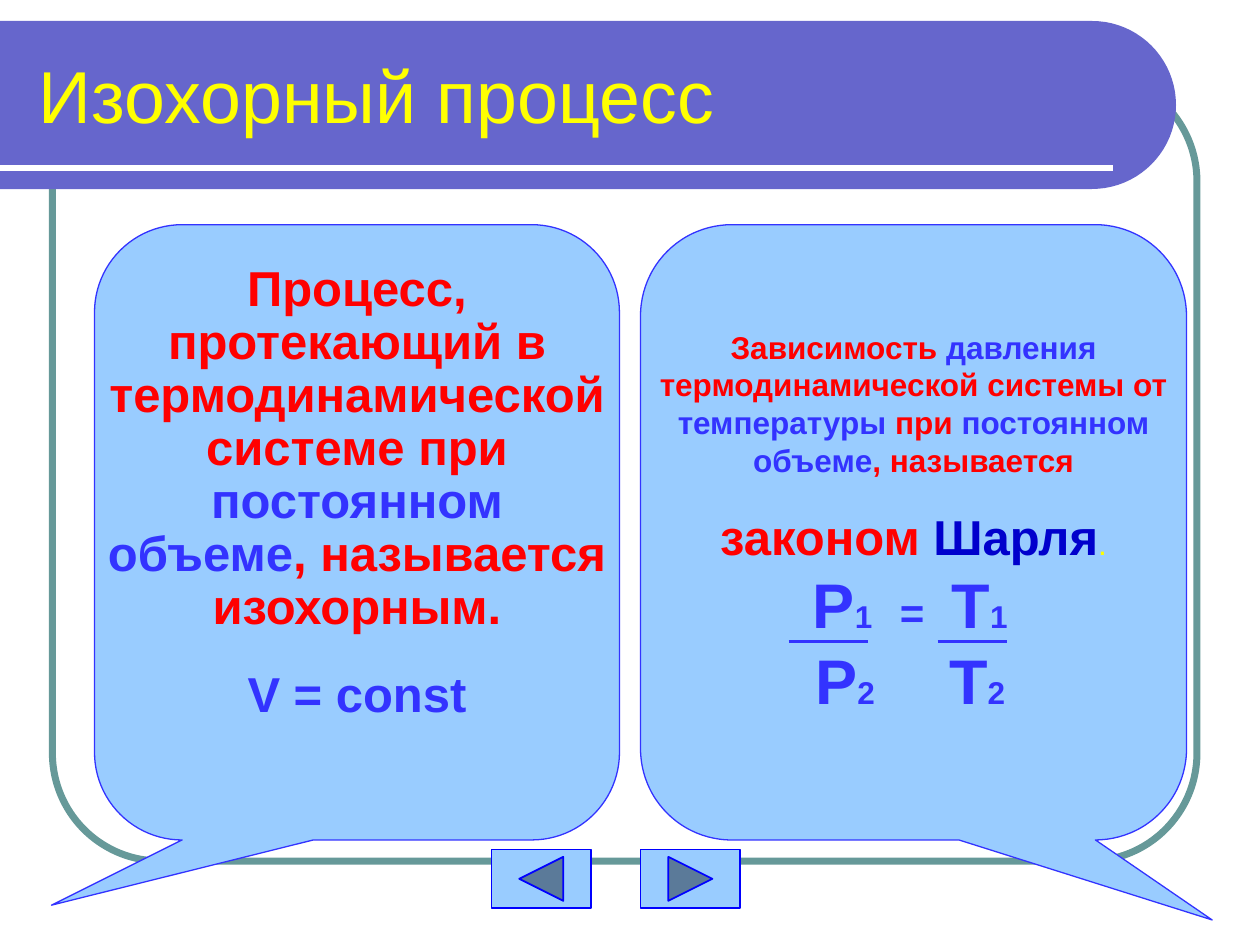
from math import cos, pi, sin

from lxml.etree import SubElement
from pptx import Presentation
from pptx.dml.color import RGBColor
from pptx.enum.shapes import MSO_CONNECTOR, MSO_SHAPE as S
from pptx.enum.text import MSO_ANCHOR, PP_ALIGN as AL
from pptx.oxml.ns import qn
from pptx.util import Inches, Pt

RED, BLUE, NAVY, SKY, YELLOW = "FF0000", "3333FF", "0000CC", "99CCFF", "FFFF00"

prs = Presentation()
prs.slide_width, prs.slide_height = Inches(10), Inches(7.5)
slide = prs.slides.add_slide(prs.slide_layouts[6])
shapes = slide.shapes
U = prs.slide_width / 120  # square grid: 120 columns, 90 rows


def paint(shape, fill=None, line=None, width=1):
    """Colour a shape or a connector from hex strings."""
    if fill:
        shape.fill.solid()
        shape.fill.fore_color.rgb = RGBColor.from_string(fill)
    elif hasattr(shape, "fill"):
        shape.fill.background()
    if line:
        shape.line.color.rgb = RGBColor.from_string(line)
        shape.line.width = Pt(width)
    else:
        shape.line.fill.background()
    if hasattr(shape, "shadow"):
        shape.shadow.inherit = False
    else:
        SubElement(shape._element.spPr, qn("a:effectLst"))


def write(paragraphs, box, inset=0.05, anchor=MSO_ANCHOR.TOP):
    """Each paragraph: runs of (text, size, colour, bold) and its format."""
    frame = shapes.add_textbox(*[round(v * U) for v in box]).text_frame
    frame.word_wrap, frame.vertical_anchor = True, anchor
    frame.margin_top = Inches(inset)
    for i, (runs, form) in enumerate(paragraphs):
        par = frame.add_paragraph() if i else frame.paragraphs[0]
        par.alignment = form.get("align", AL.CENTER)
        par.space_before = Pt(form.get("before", 0))
        par.line_spacing = form.get("spacing", 1.0)
        if "tabs" in form:
            stops = SubElement(par._p.get_or_add_pPr(), qn("a:tabLst"))
            for stop in form["tabs"]:
                SubElement(stops, qn("a:tab"), pos=str(Inches(stop)), algn="l")
        for text, size, color, bold in runs:
            run = par.add_run()
            run.text = text
            run.font.name, run.font.size, run.font.bold = "Arial", Pt(size), bold
            run.font.color.rgb = RGBColor.from_string(color)


# Frame behind the content
frame_line = shapes.add_shape(S.ROUNDED_RECTANGLE, *[round(v * U) for v in (5, 7, 109, 75)])
frame_line.adjustments[0] = 0.137
paint(frame_line, line="669999", width=4)

# Title band with a round right end
radius, center_x, center_y = 8, 104, 10
arc = [(center_x + radius * cos(a), center_y + radius * sin(a))
       for a in (pi * (step / 40 - 0.5) for step in range(41))]
builder = shapes.build_freeform(0, round(2 * U), scale=1.0)
builder.add_line_segments([(round(x * U), round(y * U)) for x, y in arc + [(0, 18)]])
paint(builder.convert_to_shape(), fill="6666CC")

# Callouts: left, width, tail position
for left, width, tail_x, tail_y in ((9, 50, -0.582, 0.606), (61, 52, 0.547, 0.63)):
    callout = shapes.add_shape(S.ROUNDED_RECTANGULAR_CALLOUT,
                               *[round(v * U) for v in (left, 21.4, width, 58.6)])
    for i, value in enumerate((tail_x, tail_y, 0.167)):
        callout.adjustments[i] = value
    paint(callout, fill=SKY, line=BLUE, width=0.75)

# Title underline and the two fraction bars
for x1, x2, y, color, width in ((0, 106, 16, "FFFFFF", 3),
                                (75.1, 82.7, 61.1, BLUE, 2.25),
                                (89.3, 95.9, 61.1, BLUE, 2.25)):
    bar = shapes.add_connector(MSO_CONNECTOR.STRAIGHT,
                               *[round(v * U) for v in (x1, y, x2, y)])
    paint(bar, line=color, width=width)

# Title
write([([("Изохорный процесс", 42, YELLOW, False)], {"align": AL.LEFT})],
      (2.5, 3, 105, 12), anchor=MSO_ANCHOR.MIDDLE)

# Definition
write([
    ([("Процесс, протекающий в термодинамической системе при ", 28, RED, True),
      ("постоянном объеме", 28, BLUE, True),
      (", называется изохорным.", 28, RED, True)], {"spacing": 0.9}),
    ([("V = const", 28, BLUE, True)], {"before": 16.5}),
], (9, 24.2, 50, 50), inset=0.08)

# Law and its formula
law = [("Зависимость ", RED), ("давления", BLUE),
       (" термодинамической системы от ", RED), ("температуры", BLUE),
       (" при ", RED), ("постоянном объеме", BLUE), (", называется", RED)]
write([
    ([(text, 18, color, True) for text, color in law], {}),
    ([("законом ", 28, RED, True), ("Шарля", 28, NAVY, True),
      (".", 18, YELLOW, False)], {"before": 16}),
    ([("\tP", 36, BLUE, True), ("1", 18, BLUE, True), ("\t=", 24, BLUE, True),
      ("\tT", 36, BLUE, True), ("1", 18, BLUE, True)],
     {"align": AL.LEFT, "tabs": (1.27, 1.96, 2.37)}),
    ([("\tP", 36, BLUE, True), ("2", 18, BLUE, True),
      ("\tT", 36, BLUE, True), ("2", 18, BLUE, True)],
     {"align": AL.LEFT, "tabs": (1.29, 2.35)}),
], (61, 25.2, 52, 49.3), inset=0.5)

# Navigation buttons
for left, kind in ((46.8, S.ACTION_BUTTON_BACK_OR_PREVIOUS),
                   (61, S.ACTION_BUTTON_FORWARD_OR_NEXT)):
    button = shapes.add_shape(kind, *[round(v * U) for v in (left, 80.9, 9.5, 5.6)])
    paint(button, fill=SKY, line="0000FF")

prs.save("out.pptx")
